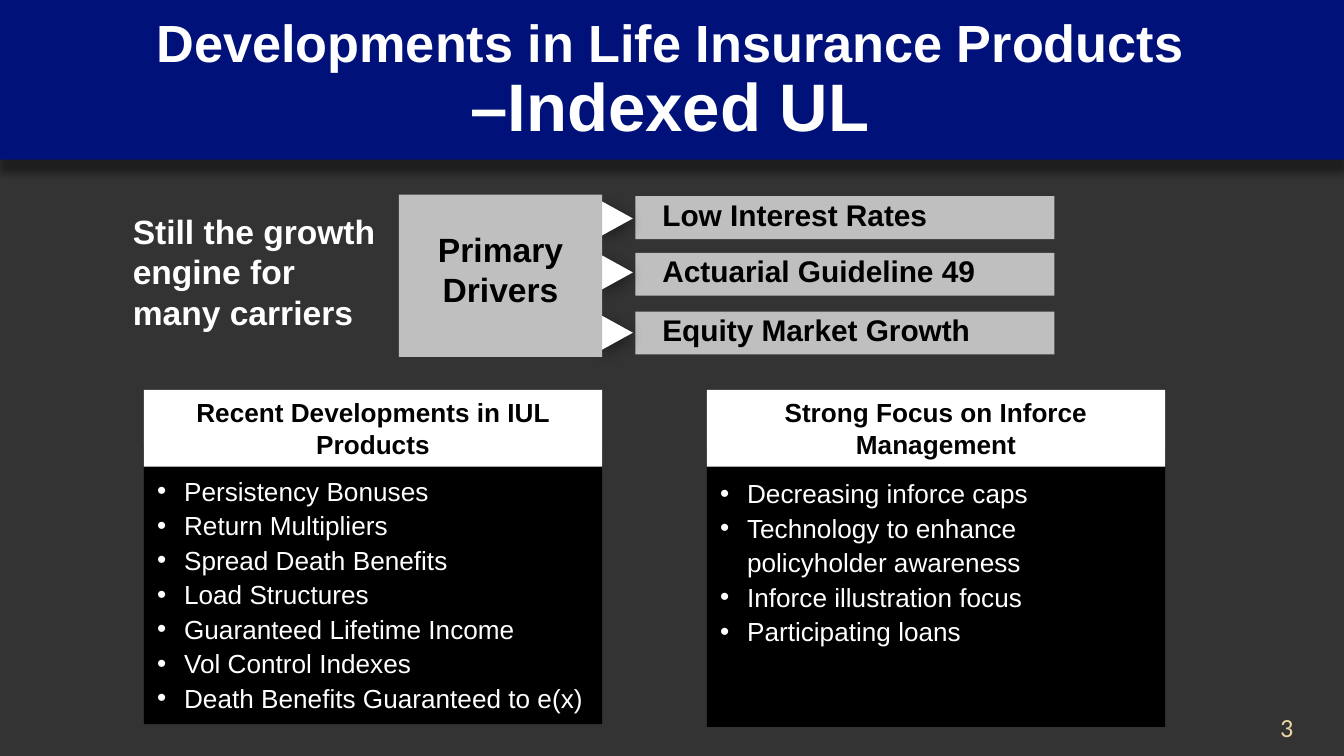
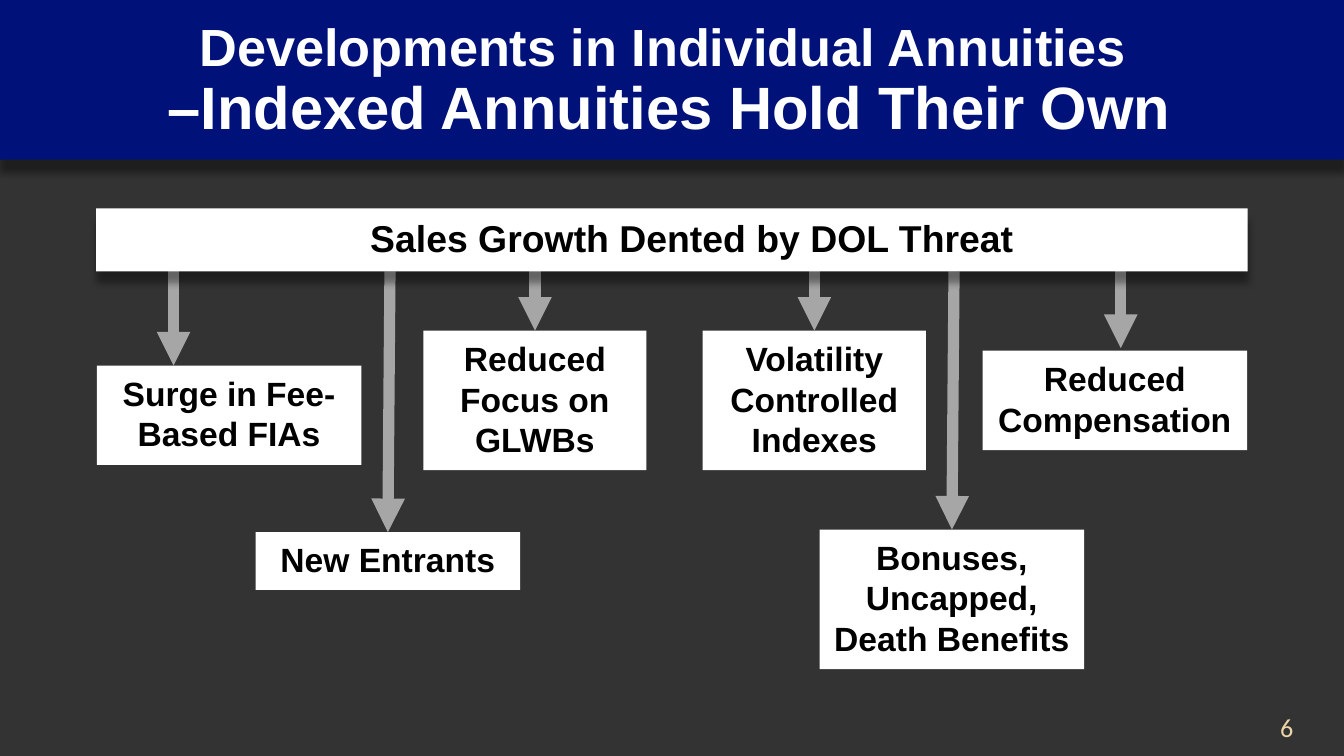
from lxml import etree
from pptx import Presentation
from pptx.dml.color import RGBColor
from pptx.enum.shapes import MSO_CONNECTOR, MSO_SHAPE
from pptx.enum.text import MSO_ANCHOR, MSO_AUTO_SIZE, PP_ALIGN
from pptx.oxml.ns import qn
from pptx.util import Cm, Pt

RECT, TRIANGLE = MSO_SHAPE.RECTANGLE, MSO_SHAPE.ISOSCELES_TRIANGLE
STRAIGHT = MSO_CONNECTOR.STRAIGHT
TOP, MIDDLE = MSO_ANCHOR.TOP, MSO_ANCHOR.MIDDLE
LEFT, CENTER = PP_ALIGN.LEFT, PP_ALIGN.CENTER

# Shared look
WIDTH, HEIGHT = 25.4, 14.29
BACKGROUND, BAND, GOLD = "333333", "001279", "ECD6A7"
WHITE, BLACK, SILVER, ARROW_GRAY = "FFFFFF", "000000", "BFBFBF", "A6A6A6"
FONT, NUMBER_FONT = "Arial", "Calibri"
BAND_SHADOW = (40, 4, 6, 90)  # opacity %, blur pt, distance pt, angle
POINTER_SHADOW = (45, 8, 2, 80)

# Slide content: all lengths in centimetres
UL_TITLE = ("Developments in Life Insurance Products", "–Indexed UL", 36)
UL_MESSAGE = "Still the growth engine for many carriers"
DRIVERS_HEADING = "Primary Drivers"
DRIVERS = [  # text, bar top, pointer top
    ("Low Interest Rates", 3.71, 3.84),
    ("Actuarial Guideline 49", 4.78, 4.86),
    ("Equity Market Growth", 5.89, 6.0),
]
PANELS = [  # heading, left, body top, bullets
    ("Recent Developments in IUL Products", 2.72, 8.41,
     ["Persistency Bonuses", "Return Multipliers", "Spread Death Benefits",
      "Load Structures", "Guaranteed Lifetime Income", "Vol Control Indexes",
      "Death Benefits Guaranteed to e(x)"]),
    ("Strong Focus on Inforce Management", 13.36, 8.46,
     ["Decreasing inforce caps", "Technology to enhance policyholder awareness",
      "Inforce illustration focus", "Participating loans"]),
]

ANNUITY_TITLE = ("Developments in Individual Annuities ",
                 "–Indexed Annuities Hold Their Own", 32)
HEADLINE = "Sales Growth Dented by DOL Threat"
WIDE, NARROW = 5.0, 4.22
BOX_HEIGHTS = {1: 1.09, 2: 1.88, 3: 2.64}  # by number of text lines
EFFECTS = [  # text, left, top, width, lines, arrow x, arrow end (None: joined)
    ("Surge in Fee-Based FIAs", 1.83, 6.91, WIDE, 2, 3.28, 6.91),
    ("New Entrants", 4.83, 10.06, WIDE, 1, 7.37, None),
    ("Reduced Focus on GLWBs", 8.0, 6.25, NARROW, 3, 10.11, None),
    ("Volatility Controlled Indexes", 13.28, 6.25, NARROW, 3, 15.39, None),
    ("Reduced Compensation", 18.57, 6.63, WIDE, 2, 21.18, 6.58),
    ("Bonuses, Uncapped, Death Benefits", 15.49, 10.01, WIDE, 3, 18.03, None),
]


def rgb(value):
    return RGBColor.from_string(value)


def style_run(r, size, color, bold=True, font=FONT):
    r.font.name, r.font.size, r.font.bold = font, Pt(size), bold
    r.font.color.rgb = rgb(color)


def write(sp, text, size, color=BLACK, bold=True, font=FONT, align=CENTER,
          anchor=MIDDLE, insets=(0.25, 0.13, 0.25, 0.13)):
    """Fill a shape with text; each line of the text is a paragraph."""
    tf = sp.text_frame
    tf.text = text
    tf.word_wrap, tf.vertical_anchor = True, anchor
    tf.margin_left, tf.margin_top, tf.margin_right, tf.margin_bottom = map(Cm, insets)
    for p in tf.paragraphs:
        p.alignment = align
        for r in p.runs:
            style_run(r, size, color, bold, font)


def add_block(s, left, top, width, height, fill, kind=RECT, shadow=None):
    sp = s.shapes.add_shape(kind, Cm(left), Cm(top), Cm(width), Cm(height))
    sp.fill.solid()
    sp.fill.fore_color.rgb = rgb(fill)
    sp.line.fill.background()
    sp.shadow.inherit = False
    if shadow:
        add_shadow(sp, *shadow)
    return sp


def add_shadow(sp, opacity, blur, distance, angle):
    effects = sp.element.spPr.find(qn("a:effectLst"))
    outer = etree.SubElement(effects, qn("a:outerShdw"), blurRad=str(Pt(blur)),
                             dist=str(Pt(distance)), dir=str(angle * 60000),
                             algn="ctr", rotWithShape="0")
    color = etree.SubElement(outer, qn("a:srgbClr"), val=BLACK)
    etree.SubElement(color, qn("a:alpha"), val=str(opacity * 1000))


def add_label(s, left, top, width, height, text, size, **style):
    sp = s.shapes.add_textbox(Cm(left), Cm(top), Cm(width), Cm(height))
    write(sp, text, size, **style)


def add_bullets(tf):
    for p in tf.paragraphs:
        p.line_spacing = 1.1
        pPr = p._p.get_or_add_pPr()
        pPr.set("marL", str(Cm(0.51)))
        pPr.set("indent", str(-Cm(0.51)))
        etree.SubElement(pPr, qn("a:buFont"), typeface=FONT)
        etree.SubElement(pPr, qn("a:buChar"), char="•")


def add_arrow(s, x, start, end, target):
    """Draw a downward arrow, joined to the target's top unless end is given."""
    line = s.shapes.add_connector(STRAIGHT, Cm(x), Cm(start), Cm(x), Cm(end or start))
    if end is None:
        line.end_connect(target, 0)
    line.line.width = Pt(6)
    line.line.color.rgb = rgb(ARROW_GRAY)
    etree.SubElement(line.line._get_or_add_ln(), qn("a:tailEnd"), type="triangle")
    etree.SubElement(line._element.spPr, qn("a:effectLst"))


def new_slide(prs, heading, number):
    """Add a slide with the blue band, two-line title and page number."""
    first, second, second_size = heading
    s = prs.slides.add_slide(prs.slide_layouts[5])
    title = s.shapes.title
    band = add_block(s, 0, 0, WIDTH, 3.02, BAND, shadow=BAND_SHADOW)
    title.element.addprevious(band.element)
    title.left, title.top, title.width, title.height = map(Cm, (0.53, 0.13, 24.26, 2.84))
    write(title, f"{first}\v{second}", 28, color=WHITE)
    title.text_frame.auto_size = MSO_AUTO_SIZE.NONE
    p = title.text_frame.paragraphs[0]
    p.line_spacing = 0.9
    p.runs[1].font.size = Pt(second_size)
    add_label(s, 22.99, 13.44, 2.41, 0.61, str(number), 14, color=GOLD,
              bold=False, font=NUMBER_FONT, insets=(0.25, 0, 0, 0))
    return s


def build_indexed_ul(prs):
    s = new_slide(prs, UL_TITLE, 3)

    # Growth message and its drivers
    add_label(s, 2.26, 3.86, 5.21, 2.57, UL_MESSAGE, 18, color=WHITE,
              align=LEFT, anchor=TOP)
    for text, bar_top, pointer_top in DRIVERS:
        bar = add_block(s, 12.01, bar_top, 7.92, 0.81, SILVER)
        write(bar, text, 16, align=LEFT, insets=(0.51, 0, 0.51, 0.13))
        pointer = add_block(s, 11.35, pointer_top, 0.64, 0.58, WHITE, TRIANGLE,
                            POINTER_SHADOW)
        pointer.rotation = 90
    hub = add_block(s, 7.54, 3.68, 3.84, 3.07, SILVER)
    write(hub, DRIVERS_HEADING, 18, insets=(0.25, 0, 0.25, 0.25))

    # Bulleted panels
    for heading, left, top, items in PANELS:
        body = add_block(s, left, top, 8.66, 5.28, BLACK)
        write(body, "\n".join(items), 14, color=WHITE, bold=False, align=LEFT,
              anchor=TOP, insets=(0.25, 0.51, 0.25, 0.13))
        add_bullets(body.text_frame)
        header = add_block(s, left, 7.37, 8.66, 1.45, WHITE)
        write(header, heading, 14, insets=(0.51, 0.13, 0.51, 0.13))


def build_annuities(prs):
    s = new_slide(prs, ANNUITY_TITLE, 6)
    bar_top, bar_height = 3.94, 1.19

    # Effects, each with an arrow from the headline bar
    for text, left, top, width, lines, x, end in EFFECTS:
        box = add_block(s, left, top, width, BOX_HEIGHTS[lines], WHITE)
        write(box, text, 18, insets=(0.25, 0.13, 0.25, 0.2))
        add_arrow(s, x, bar_top + bar_height, end, box)

    # Headline bar above the arrows
    bar = add_block(s, 1.82, bar_top, 21.76, bar_height, WHITE, shadow=BAND_SHADOW)
    write(bar, HEADLINE, 20, insets=(0.76, 0.13, 0, 0.2))


def main():
    prs = Presentation()
    prs.slide_width, prs.slide_height = Cm(WIDTH), Cm(HEIGHT)
    fill = prs.slide_master.background.fill
    fill.solid()
    fill.fore_color.rgb = rgb(BACKGROUND)
    build_indexed_ul(prs)
    build_annuities(prs)
    prs.save("out.pptx")


if __name__ == "__main__":
    main()
